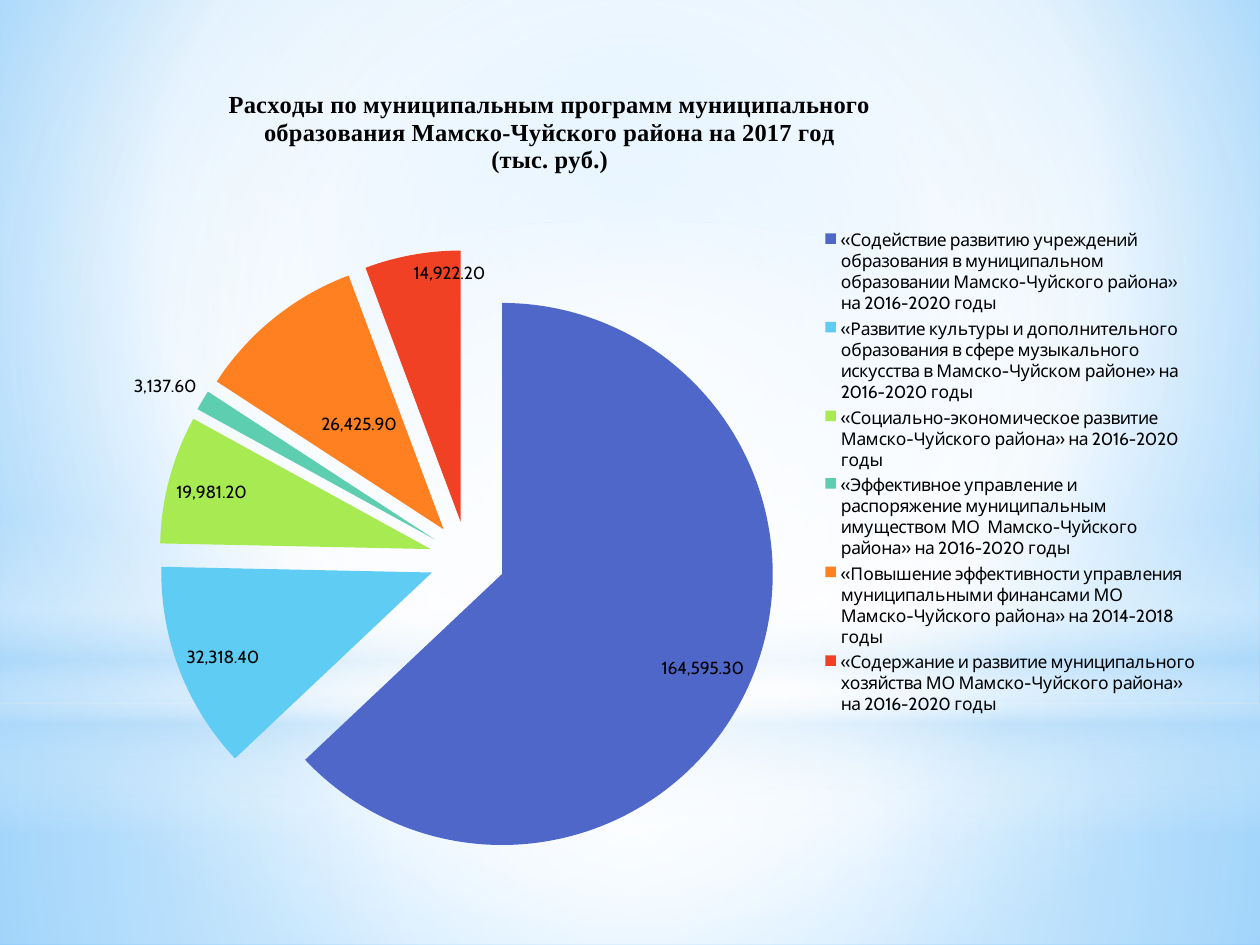
from lxml import etree
from pptx import Presentation
from pptx import util as u
from pptx.chart.data import CategoryChartData
from pptx.dml.color import RGBColor
from pptx.enum import chart as ch, shapes
from pptx.oxml import parse_xml
from pptx.oxml.ns import nsdecls, qn

WIDTH, HEIGHT = 10, 7.5
HORIZON = 5.58
HUES = {"white": "FFFFFF", "pale": "B4DCFA", "sky": "9ED5FF", "azure": "5BB9FF",
        "text": "000000", "blue": "4E67C8", "cyan": "5ECCF3", "lime": "A7EA52",
        "teal": "5DCEAF", "orange": "FF8021", "red": "F14124"}

TITLE = ["Расходы по муниципальным программ муниципального",
         "образования Мамско-Чуйского района на 2017 год",
         "(тыс. руб.)"]
# programme, spending, colour, label position
PROGRAMS = [
    ("«Содействие развитию учреждений образования в муниципальном образовании "
     "Мамско-Чуйского района» на 2016-2020 годы", 164595.3, "blue", "INSIDE_END"),
    ("«Развитие культуры и дополнительного образования в сфере музыкального искусства "
     "в Мамско-Чуйском районе» на 2016-2020 годы", 32318.4, "cyan", "INSIDE_END"),
    ("«Социально-экономическое развитие Мамско-Чуйского района» на 2016-2020 годы",
     19981.2, "lime", "INSIDE_END"),
    ("«Эффективное управление и распоряжение муниципальным имуществом МО  "
     "Мамско-Чуйского района» на 2016-2020 годы", 3137.6, "teal", "OUTSIDE_END"),
    ("«Повышение эффективности управления муниципальными финансами МО "
     "Мамско-Чуйского района» на 2014-2018 годы", 26425.9, "orange", "CENTER"),
    ("«Содержание и развитие муниципального хозяйства МО Мамско-Чуйского района» "
     "на 2016-2020 годы", 14922.2, "red", "INSIDE_END"),
]

# Gradient stops: position, colour, opacity (all in percent)
BACK = [(0, "sky", 100), (60, "white", 100), (100, "azure", 100)]
MIDDLE = (50, 50, 50, 50)
# preset, top, height, stops, focus (None is a vertical gradient)
LAYERS = [
    ("RECTANGLE", HORIZON, HEIGHT - HORIZON,
     [(0, "white", 91), (37, "white", 76), (100, "pale", 79)], MIDDLE),
    ("RECTANGLE", 0, HORIZON,
     [(0, "white", 89), (48, "white", 62), (100, "pale", 79)], MIDDLE),
    ("RECTANGLE", 4.12, 2.5,
     [(0, "white", 0), (29, "white", 30), (45, "pale", 40), (55, "white", 26),
      (65, "pale", 60), (100, "white", 0)], None),
    ("OVAL", 1.75, HORIZON, [(0, "white", 100), (56, "white", 0)], MIDDLE),
]


def color(name):
    return RGBColor.from_string(HUES[name])


def shade(fill, parent, stops, focus):
    """Replace the solid fill inside parent with a gradient."""
    fill.solid()
    marks = "".join(
        f'<a:gs pos="{pos * 1000}"><a:srgbClr val="{HUES[hue]}">'
        f'<a:alpha val="{alpha * 1000}"/></a:srgbClr></a:gs>'
        for pos, hue, alpha in stops)
    if focus:
        rect = " ".join(f'{side}="{part * 1000}"' for side, part in zip("ltrb", focus))
        way = f'<a:path path="circle"><a:fillToRect {rect}/></a:path>'
    else:
        way = '<a:lin ang="5400000" scaled="0"/>'
    grad = parse_xml(f'<a:gradFill {nsdecls("a")} rotWithShape="1">'
                     f'<a:gsLst>{marks}</a:gsLst>{way}</a:gradFill>')
    parent.replace(parent.find(qn("a:solidFill")), grad)


def place(part, inner=False, **shares):
    """Position a chart part by shares of the chart's size."""
    for old in part.findall(qn("c:layout")):
        part.remove(old)
    layout = etree.Element(qn("c:layout"))
    manual = etree.SubElement(layout, qn("c:manualLayout"))
    rules = {"layoutTarget": "inner"} if inner else {}
    rules.update(xMode="edge", yMode="edge", **shares)
    for tag, value in rules.items():
        etree.SubElement(manual, qn(f"c:{tag}")).set("val", str(value))
    lead = [node for name in ("c:tx", "c:legendPos") for node in part.findall(qn(name))]
    part.insert(part.index(lead[-1]) + 1 if lead else 0, layout)


def style(font, name, size):
    font.name, font.size = name, u.Pt(size)
    font.color.rgb = color("text")


def add_pie(slide):
    data = CategoryChartData(number_format="#,##0.00")
    data.categories = [row[0] for row in PROGRAMS]
    data.add_series("Series 1", [row[1] for row in PROGRAMS])
    chart = slide.shapes.add_chart(
        ch.XL_CHART_TYPE.PIE, *map(u.Inches, (0.41, 0.48, 9.18, 6.54)), data).chart
    style(chart.font, "Cabin", 10)

    chart.has_title = True
    frame = chart.chart_title.text_frame
    frame.text = "\n".join(TITLE)
    for para in frame.paragraphs:
        for run in para.runs:
            style(run.font, "Times New Roman", 14)
            run.font.bold = True
    place(chart.chart_title.element if hasattr(chart.chart_title, "element")
          else chart.element.find(".//" + qn("c:title")), x=0.15, y=0.03)

    chart.has_legend = True
    chart.legend.position = ch.XL_LEGEND_POSITION.RIGHT
    chart.legend.include_in_layout = False
    style(chart.legend.font, "Cabin", 10)
    place(chart.element.find(".//" + qn("c:legend")), x=0.67, y=0.2, w=0.32, h=0.6)
    place(chart.element.find(".//" + qn("c:plotArea")), inner=True,
          x=0.09, y=0.23, w=0.54, h=0.75)

    plot = chart.plots[0]
    plot.vary_by_categories = True
    series = plot.series[0]
    for index, (_, _, hue, spot) in enumerate(PROGRAMS):
        point = series.points[index]
        point.format.fill.solid()
        point.format.fill.fore_color.rgb = color(hue)
        label = point.data_label
        style(label.font, "Cabin", 10)
        label.position = getattr(ch.XL_LABEL_POSITION, spot)
    ser = chart.element.find(".//" + qn("c:ser"))
    burst = etree.Element(qn("c:explosion"))
    burst.set("val", "14")
    ser.find(qn("c:dPt")).addprevious(burst)


def main():
    deck = Presentation()
    deck.slide_width, deck.slide_height = u.Inches(WIDTH), u.Inches(HEIGHT)
    slide = deck.slides.add_slide(deck.slide_layouts[6])
    back = slide.background.fill
    back.solid()
    shade(back, slide.element.find(".//" + qn("p:bgPr")), BACK, (20, 10, 20, 60))
    for preset, top, height, stops, focus in LAYERS:
        layer = slide.shapes.add_shape(
            getattr(shapes.MSO_SHAPE, preset),
            *map(u.Inches, (0, top, WIDTH, height)))
        layer.shadow.inherit = False
        layer.line.fill.background()
        shade(layer.fill, layer.element.spPr, stops, focus)
    add_pie(slide)
    deck.save("out.pptx")


if __name__ == "__main__":
    main()
